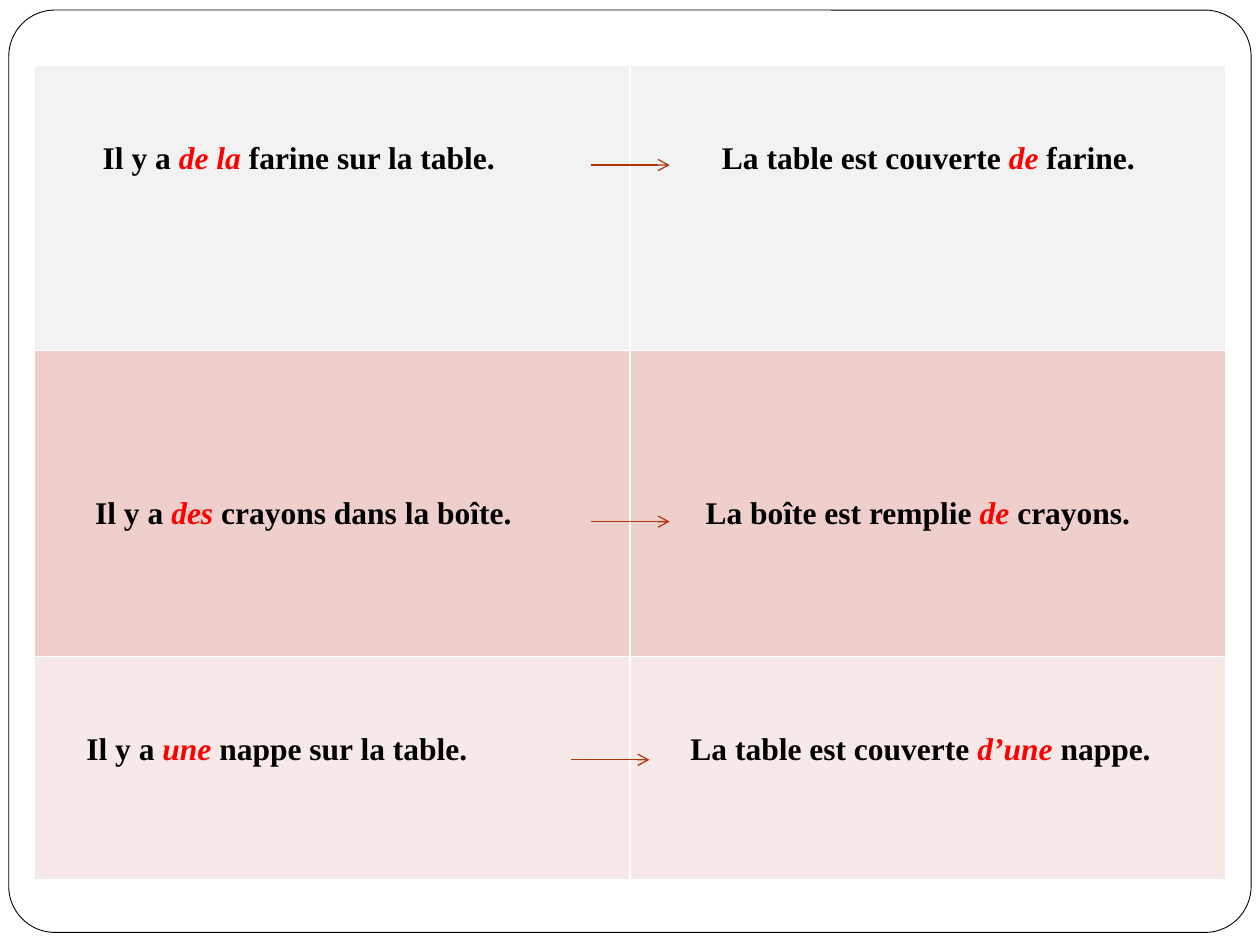
from lxml import etree
from pptx import Presentation
from pptx.dml.color import RGBColor
from pptx.enum.shapes import MSO_CONNECTOR, MSO_SHAPE
from pptx.oxml.ns import qn
from pptx.util import Inches, Pt

ROUNDED = MSO_SHAPE.ROUNDED_RECTANGLE
STRAIGHT = MSO_CONNECTOR.STRAIGHT

COLUMNS, ROWS = 100, 75
TABLE_LEFT, TABLE_TOP, TABLE_WIDTH = 2.75, 5.2, 94.5
ARROW_LENGTH = 6.25

# Row height, fill, space above the sentences, then one (indent, before, article, after) per column
EXAMPLES = [
    (22.6, "F2F2F2", 6,
     [(5.4, "Il y a ", "de la ", "farine sur la table."),
      (7.3, "La table est couverte ", "de ", "farine.")]),
    (24.3, "EFCFCC", 11.6,
     [(4.8, "Il y a ", "des ", "crayons dans la boîte."),
      (6, "La boîte est remplie ", "de ", "crayons.")]),
    (17.7, "F7E9E8", 6,
     [(4.1, "Il y a ", "une ", "nappe sur la table."),
      (4.8, "La table est couverte ", "d’une ", "nappe.")]),
]
ARROW_STARTS = [(46.9, 13.1), (46.9, 41.4), (45.3, 60.3)]


def rgb(value):
    return RGBColor.from_string(value)


class SlideBuilder:
    font, size = "Times New Roman", Pt(18)
    ink, accent, arrow_color, paper = "000000", "FF0000", "B1360B", "FFFFFF"

    def __init__(self, presentation):
        self.slide = presentation.slides.add_slide(presentation.slide_layouts[6])
        self.column = presentation.slide_width / COLUMNS
        self.row = presentation.slide_height / ROWS

    def across(self, columns):
        return round(columns * self.column)

    def down(self, rows):
        return round(rows * self.row)

    def frame(self, left, top, width, height):
        border = self.slide.shapes.add_shape(
            ROUNDED, self.across(left), self.down(top), self.across(width), self.down(height))
        border.adjustments[0] = 0.05
        border.shadow.inherit = False
        border.fill.solid()
        border.fill.fore_color.rgb = rgb(self.paper)
        border.line.color.rgb = rgb(self.ink)
        border.line.width = Pt(0.5)

    def table(self, examples):
        heights = [example[0] for example in examples]
        grid = self.slide.shapes.add_table(
            len(examples), 2, self.across(TABLE_LEFT), self.down(TABLE_TOP),
            self.across(TABLE_WIDTH), self.down(sum(heights))).table
        for r, (height, fill, space_above, sentences) in enumerate(examples):
            grid.rows[r].height = self.down(height)
            for c, (indent, *parts) in enumerate(sentences):
                cell = grid.cell(r, c)
                cell.margin_left = self.across(indent)
                cell.margin_top = self.down(space_above)
                cell.fill.solid()
                cell.fill.fore_color.rgb = rgb(fill)
                self.cell_borders(cell)
                self.sentence(cell.text_frame.paragraphs[0], parts)

    def cell_borders(self, cell):
        properties = cell._tc.get_or_add_tcPr()
        for position, side in enumerate(("a:lnL", "a:lnR", "a:lnT", "a:lnB")):
            edge = etree.Element(qn(side), w=str(Pt(1)))
            solid = etree.SubElement(edge, qn("a:solidFill"))
            etree.SubElement(solid, qn("a:srgbClr"), val=self.paper)
            properties.insert(position, edge)

    def sentence(self, paragraph, parts):
        """Write the words before, the highlighted article and the words after."""
        for words, highlighted in zip(parts, (False, True, False)):
            run = paragraph.add_run()
            run.text = words
            run.font.name, run.font.size = self.font, self.size
            run.font.bold, run.font.italic = True, highlighted
            run.font.color.rgb = rgb(self.accent if highlighted else self.ink)

    def arrow(self, left, top):
        y = self.down(top)
        line = self.slide.shapes.add_connector(
            STRAIGHT, self.across(left), y, self.across(left + ARROW_LENGTH), y)
        line.line.color.rgb = rgb(self.arrow_color)
        line.line.width = Pt(0.75)
        etree.SubElement(line.line._get_or_add_ln(), qn("a:tailEnd"), type="arrow")
        etree.SubElement(line._element.spPr, qn("a:effectLst"))


def main():
    presentation = Presentation()
    presentation.slide_width, presentation.slide_height = Inches(10), Inches(7.5)
    builder = SlideBuilder(presentation)
    builder.frame(0.7, 0.8, 98.6, 73.2)
    builder.table(EXAMPLES)
    for left, top in ARROW_STARTS:
        builder.arrow(left, top)
    presentation.save("out.pptx")


if __name__ == "__main__":
    main()
